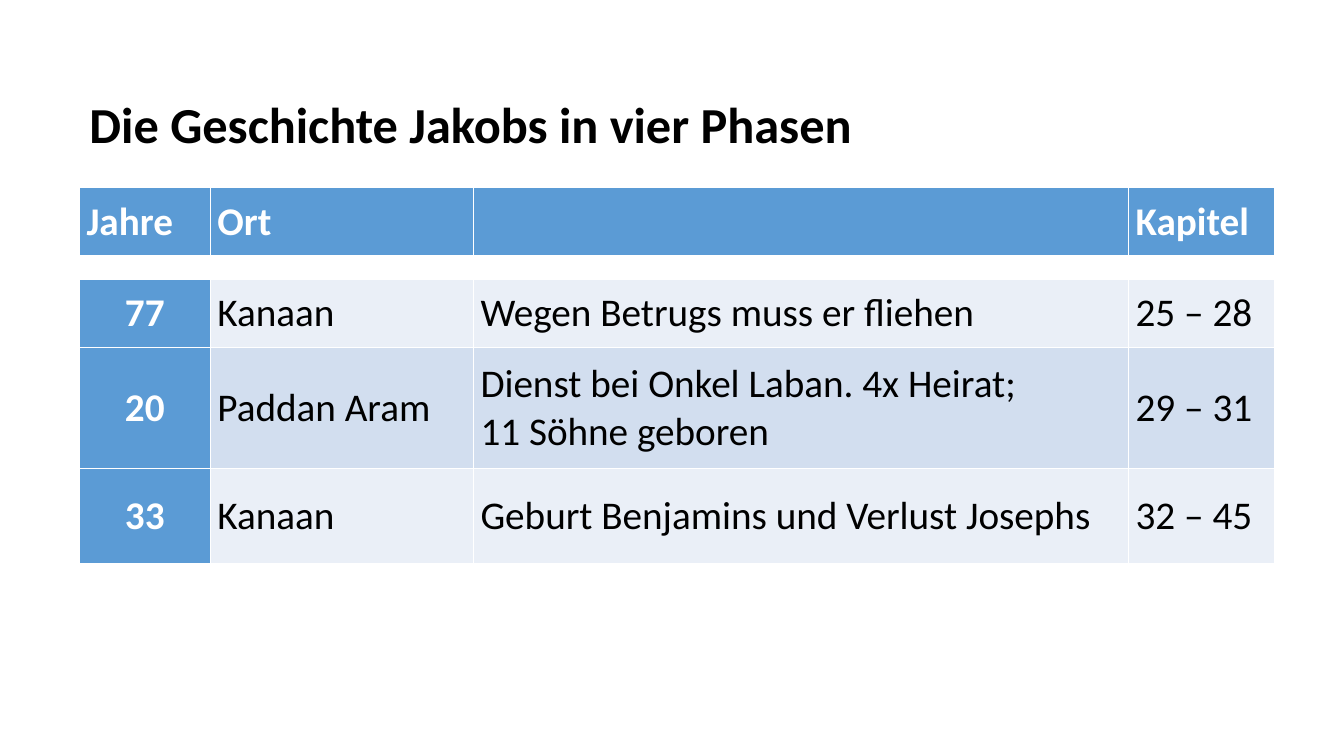
from lxml.etree import SubElement
from pptx import Presentation
from pptx.dml.color import RGBColor
from pptx.enum.text import MSO_ANCHOR, MSO_AUTO_SIZE, PP_ALIGN
from pptx.oxml.ns import qn
from pptx.util import Cm, Pt

COLOURS = {
    "text": "000000",
    "white": "FFFFFF",
    "accent": "5B9BD5",
    "light": "EAEFF7",
    "medium": "D2DEEF",
}
COLUMN_WIDTHS = [3.3, 6.63, 16.51, 3.68]
ROW_HEIGHTS = [1.73, 0.58, 1.73, 3.05, 2.39]
PHASES = [
    ["Jahre", "Ort", "", "Kapitel"],
    ["", "", "", ""],
    ["77", "Kanaan", "Wegen Betrugs muss er fliehen", "25 – 28"],
    ["20", "Paddan Aram", "Dienst bei Onkel Laban. 4x Heirat;\n11 Söhne geboren", "29 – 31"],
    ["33", "Kanaan", "Geburt Benjamins und Verlust Josephs", "32 – 45"],
]
HEADER_ROW, GAP_ROW = 0, 1
ROW_FILLS = ["accent", "white", "light", "medium", "light"]


def apply_format(target, values):
    for name, value in values.items():
        setattr(target, name, value)


def format_span(span, size, colour, bold):
    apply_format(span.font, {"name": "Calibri", "size": Pt(size), "bold": bold})
    span.font.color.rgb = RGBColor.from_string(COLOURS[colour])


def add_title(page, left, top, width, height):
    box = page.shapes.title
    apply_format(box, {"left": Cm(left), "top": Cm(top), "width": Cm(width), "height": Cm(height)})
    apply_format(box.text_frame, {
        "word_wrap": False,
        "auto_size": MSO_AUTO_SIZE.SHAPE_TO_FIT_TEXT,
        "vertical_anchor": MSO_ANCHOR.TOP,
    })
    para = box.text_frame.paragraphs[0]
    para.alignment = PP_ALIGN.LEFT
    span = para.add_run()
    span.text = "Die Geschichte Jakobs in vier Phasen"
    format_span(span, 36, "text", True)


def add_borders(cell):
    properties = cell._tc.get_or_add_tcPr()
    for side in ("lnL", "lnR", "lnT", "lnB"):
        line = SubElement(properties, qn(f"a:{side}"), w=str(Pt(1)))
        fill = SubElement(line, qn("a:solidFill"))
        SubElement(fill, qn("a:srgbClr"), val=COLOURS["white"])


def fill_cell(cell, text, fill, colour, bold, alignment):
    add_borders(cell)
    cell.fill.solid()
    cell.fill.fore_color.rgb = RGBColor.from_string(COLOURS[fill])
    apply_format(cell, {
        "text": text,
        "vertical_anchor": MSO_ANCHOR.MIDDLE,
        "margin_left": Cm(0.18),
        "margin_right": Cm(0.18),
        "margin_top": 0,
        "margin_bottom": 0,
    })
    for para in cell.text_frame.paragraphs:
        para.alignment = alignment
        for span in para.runs:
            format_span(span, 28, colour, bold)
        if not text:
            SubElement(para._p, qn("a:endParaRPr"), sz="800")


def add_phase_table(page, left, top):
    frame = page.shapes.add_table(
        len(ROW_HEIGHTS), len(COLUMN_WIDTHS), Cm(left), Cm(top),
        Cm(sum(COLUMN_WIDTHS)), Cm(sum(ROW_HEIGHTS)),
    )
    table = frame.table
    for column, width in zip(table.columns, COLUMN_WIDTHS):
        column.width = Cm(width)
    for row, height in zip(table.rows, ROW_HEIGHTS):
        row.height = Cm(height)
    for row_index, texts in enumerate(PHASES):
        for column_index, text in enumerate(texts):
            is_year = row_index > GAP_ROW and column_index == 0
            is_strong = is_year or row_index == HEADER_ROW
            fill_cell(
                table.cell(row_index, column_index),
                text,
                "accent" if is_year else ROW_FILLS[row_index],
                "white" if is_strong else "text",
                is_strong,
                PP_ALIGN.CENTER if is_year else PP_ALIGN.LEFT,
            )


def main():
    deck = Presentation()
    apply_format(deck, {"slide_width": Cm(33.87), "slide_height": Cm(19.05)})
    page = deck.slides.add_slide(deck.slide_layouts[5])
    add_title(page, 2, 2.21, 19.94, 1.8)
    add_phase_table(page, 2, 4.72)
    deck.save("out.pptx")


if __name__ == "__main__":
    main()
